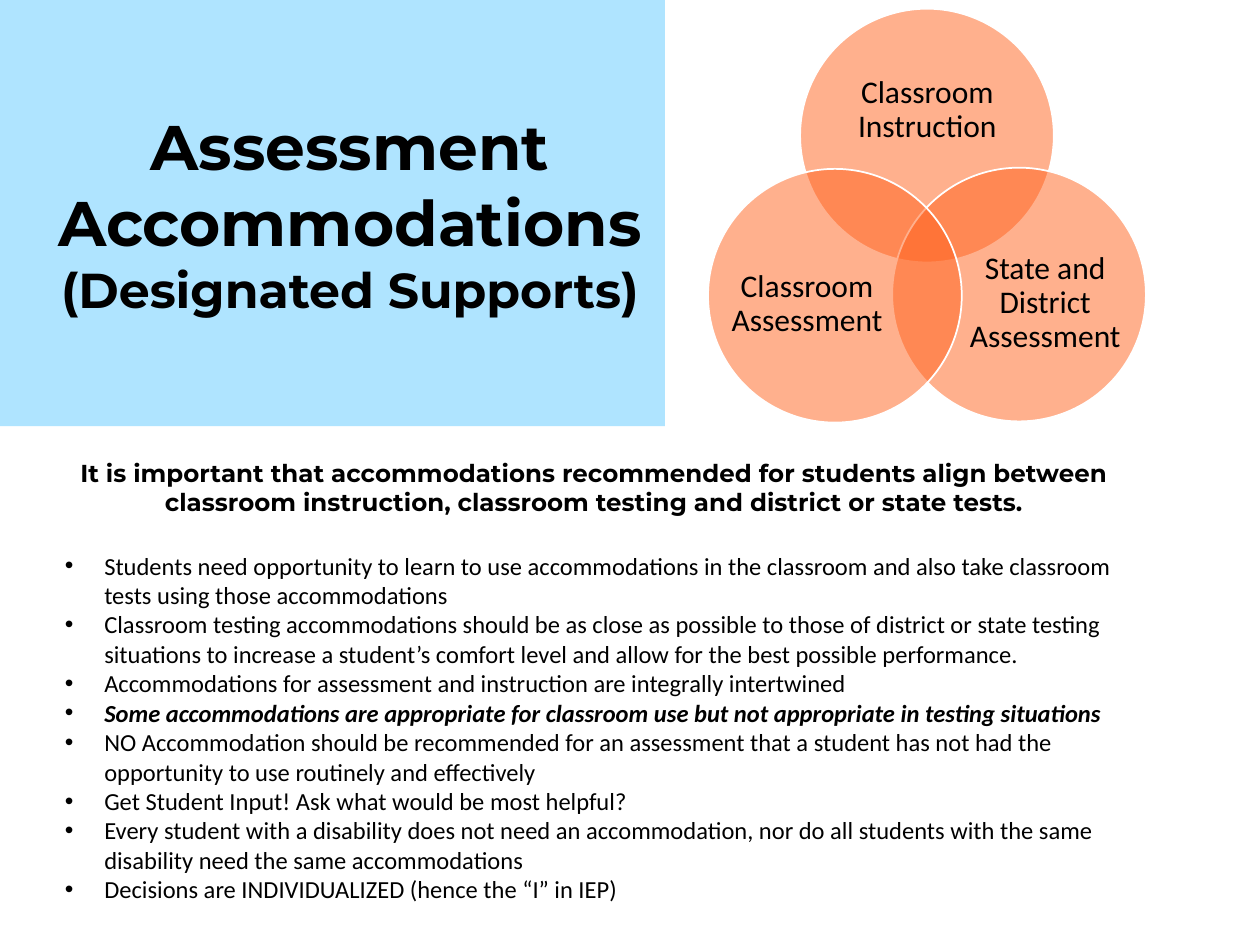
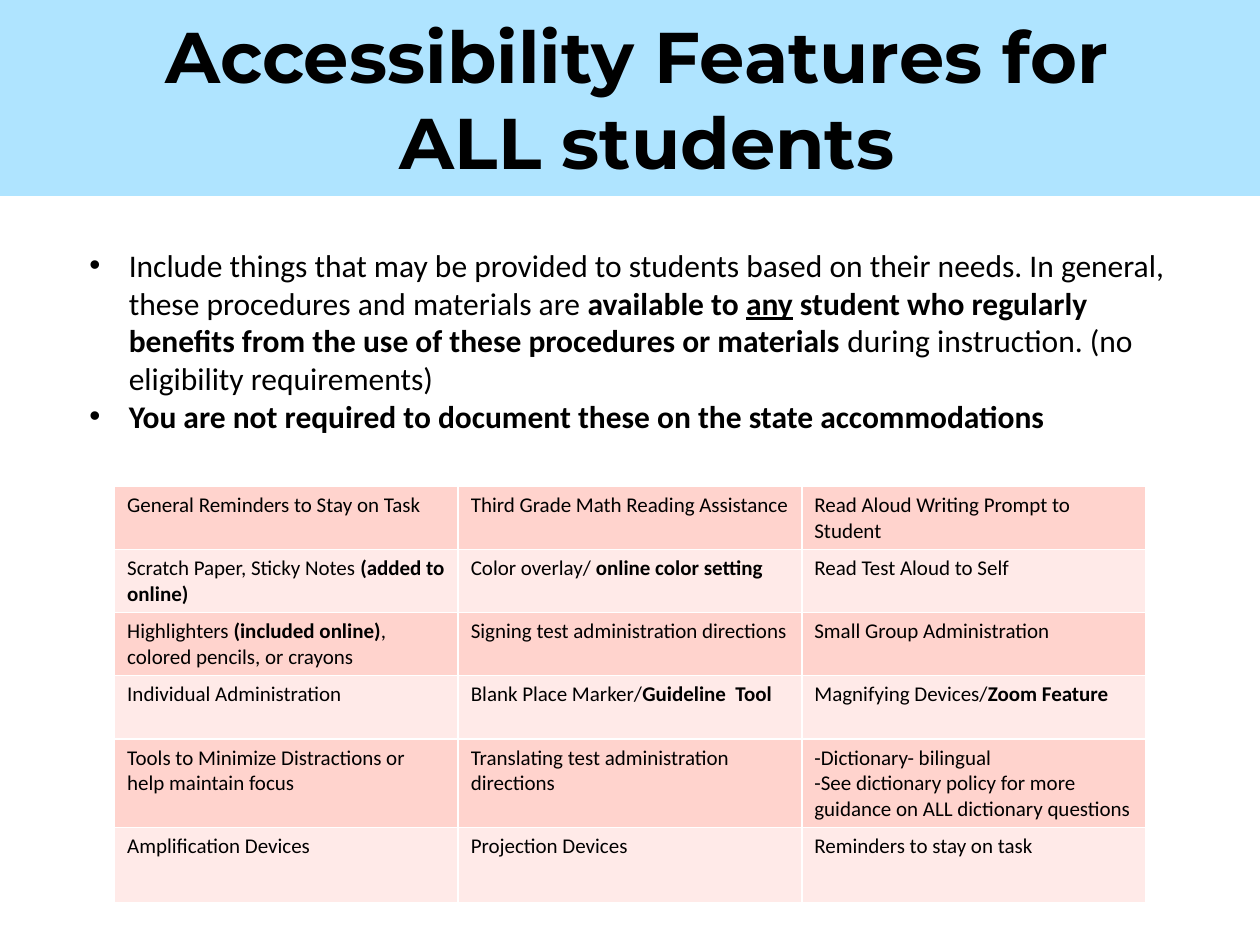
from dataclasses import dataclass
from typing import NamedTuple

from lxml import etree
from pptx import Presentation
from pptx.dml.color import RGBColor
from pptx.enum import shapes, text
from pptx.oxml import ns
from pptx.util import Pt

SKY = RGBColor(0xAF, 0xE4, 0xFF)
ORANGE = RGBColor(0xFF, 0x62, 0x1D)
ROSE = RGBColor(0xFF, 0xD3, 0xCD)
BLUSH = RGBColor(0xFF, 0xEA, 0xE8)
BLACK = RGBColor(0, 0, 0)
WHITE = RGBColor(0xFF, 0xFF, 0xFF)
HEAD = "Montserrat"
BODY = "Calibri"
INDENT = 22.5
DISC = 145


class Box(NamedTuple):
    left: float
    top: float
    width: float
    height: float

    def pts(self) -> list:
        return [Pt(side) for side in self]


class Bit(NamedTuple):
    words: str
    bold: bool = False
    slant: bool = False
    under: bool = False


@dataclass
class Circle:
    left: float
    top: float
    label: str
    area: Box


CIRCLES = [
    Circle(457.2, 5, "Classroom Instruction", Box(476.6, 30.2, 106.6, 65.5)),
    Circle(509.8, 95.8, "State and District Assessment", Box(553.7, 133.2, 87.1, 79.9)),
    Circle(404.6, 96.5, "Classroom Assessment", Box(417.6, 133.9, 87.1, 79.9)),
]

ADVICE = [
    "Students need opportunity to learn to use accommodations in the classroom and also "
    "take classroom tests using those accommodations",
    "Classroom testing accommodations should be as close as possible to those of district "
    "or state testing situations to increase a student’s comfort level and allow for the "
    "best possible performance.",
    "Accommodations for assessment and instruction are integrally intertwined",
    [Bit("Some accommodations are appropriate for classroom use but not appropriate in "
         "testing situations", bold=True, slant=True)],
    "NO Accommodation should be recommended for an assessment that a student has not had "
    "the opportunity to use routinely and effectively",
    "Get Student Input! Ask what would be most helpful?",
    "Every student with a disability does not need an accommodation, nor do all students "
    "with the same disability need the same accommodations",
    "Decisions are INDIVIDUALIZED (hence the “I” in IEP)",
]

POLICY = [
    [Bit("Include things that may be provided to students based on their needs. In general, "
         "these procedures and materials are "),
     Bit("available to ", bold=True),
     Bit("any", bold=True, under=True),
     Bit(" student who regularly benefits from the use of these procedures or materials ",
         bold=True),
     Bit("during instruction. (no eligibility requirements)")],
    [Bit("You are not required to document these on the state accommodations", bold=True)],
]

TOOLS = [
    [["General Reminders to Stay on Task"], ["Third Grade Math Reading Assistance"],
     ["Read Aloud Writing Prompt to Student"]],
    [[[Bit("Scratch Paper, Sticky Notes "), Bit("(added to online)", bold=True)]],
     [[Bit("Color overlay/ "), Bit("online color setting", bold=True)]],
     ["Read Test Aloud to Self"]],
    [[[Bit("Highlighters "), Bit("(included online)", bold=True),
       Bit(", colored pencils, or crayons")]],
     ["Signing test administration directions"], ["Small Group Administration"]],
    [["Individual Administration"],
     [[Bit("Blank Place Marker/"), Bit("Guideline  Tool", bold=True)]],
     [[Bit("Magnifying Devices/"), Bit("Zoom Feature", bold=True)]]],
    [["Tools to Minimize Distractions or help maintain focus"],
     ["Translating test administration directions"],
     ["-Dictionary- bilingual",
      "-See dictionary policy for more guidance on ALL dictionary questions"]],
    [["Amplification Devices"], ["Projection Devices"], ["Reminders to stay on task"]],
]
HEIGHTS = [34, 34, 34, 36.3, 47.5, 43]


def node(parent, tag: str, **attrs: str):
    return etree.SubElement(parent, ns.qn(tag), attrs)


def write(frame, content, *, size: float, font: str = BODY, bold: bool = False,
          center: bool = False, bullet: bool = False, ratio: float = 1,
          after: float = 0, more: bool = False) -> None:
    for spot, item in enumerate(content):
        para = frame.add_paragraph() if spot or more else frame.paragraphs[0]
        para.alignment = text.PP_ALIGN.CENTER if center else text.PP_ALIGN.LEFT
        para.line_spacing = ratio
        para.space_before = Pt(0)
        para.space_after = Pt(after)
        if bullet:
            props = para._p.get_or_add_pPr()
            props.set("marL", str(Pt(INDENT)))
            props.set("indent", str(-Pt(INDENT)))
            node(props, "a:buFont", typeface="Arial")
            node(props, "a:buChar", char="•")
        for bit in [Bit(item)] if isinstance(item, str) else item:
            run = para.add_run()
            run.text = bit.words
            face = run.font
            face.name = font
            face.size = Pt(size)
            face.color.rgb = BLACK
            face.bold = bold or bit.bold
            face.italic = bit.slant
            face.underline = bit.under


def frame_of(shape, *, pads=(7.2, 3.6, 7.2, 3.6), middle: bool = False):
    frame = shape.text_frame
    frame.word_wrap = True
    (frame.margin_left, frame.margin_top,
     frame.margin_right, frame.margin_bottom) = [Pt(pad) for pad in pads]
    anchor = text.MSO_ANCHOR
    frame.vertical_anchor = anchor.MIDDLE if middle else anchor.TOP
    return frame


def text_box(slide, box: Box, **layout):
    return frame_of(slide.shapes.add_textbox(*box.pts()), **layout)


def solid(slide, kind, box: Box, color: RGBColor):
    shape = slide.shapes.add_shape(kind, *box.pts())
    shape.shadow.inherit = False
    shape.fill.solid()
    shape.fill.fore_color.rgb = color
    shape.line.fill.background()
    return shape


def band(slide, width: float, height: float):
    shape = solid(slide, shapes.MSO_SHAPE.RECTANGLE, Box(0, 0, width, height), SKY)
    return frame_of(shape, pads=(27, 3.6, 7.2, 3.6), middle=True)


def draw_circle(slide, circle: Circle) -> None:
    box = Box(circle.left, circle.top, DISC, DISC)
    disc = solid(slide, shapes.MSO_SHAPE.OVAL, box, ORANGE)
    tint = disc._element.spPr.find(ns.qn("a:solidFill"))
    node(tint[0], "a:alpha", val="50000")
    disc.line.color.rgb = WHITE
    disc.line.width = Pt(1)
    frame = text_box(slide, circle.area, pads=(0, 0, 0, 0), middle=True)
    write(frame, [circle.label], size=18, center=True, ratio=0.9)


def edge(cell) -> None:
    props = cell._tc.get_or_add_tcPr()
    for side in ("a:lnL", "a:lnR", "a:lnT", "a:lnB"):
        fill = node(node(props, side, w=str(Pt(1))), "a:solidFill")
        node(fill, "a:srgbClr", val=str(WHITE))


def draw_table(slide, box: Box) -> None:
    table = slide.shapes.add_table(len(TOOLS), len(TOOLS[0]), *box.pts()).table
    table.first_row = table.horz_banding = False
    for col in table.columns:
        col.width = Pt(box.width / len(TOOLS[0]))
    for row, (height, line) in enumerate(zip(HEIGHTS, TOOLS)):
        table.rows[row].height = Pt(height)
        for col, content in enumerate(line):
            cell = table.cell(row, col)
            edge(cell)
            cell.fill.solid()
            cell.fill.fore_color.rgb = BLUSH if row % 2 else ROSE
            write(cell.text_frame, content, size=12)


def supports(slide) -> None:
    frame = text_box(slide, Box(30, 243.5, 619, 278.5), pads=(7.2, 18, 7.2, 3.6))
    write(frame, ["It is important that accommodations recommended for students align "
                  "between classroom instruction, classroom testing and district or state "
                  "tests."], size=14, font=HEAD, bold=True, center=True, after=19.5)
    write(frame, ADVICE, size=14, bullet=True, more=True)
    title = band(slide, 380, 243.5)
    write(title, ["Assessment", "Accommodations"], size=36, font=HEAD, bold=True, center=True)
    write(title, ["(Designated Supports)"], size=28, font=HEAD, bold=True, center=True,
          more=True)
    for circle in CIRCLES:
        draw_circle(slide, circle)


def features(slide) -> None:
    write(band(slide, 720, 112), ["Accessibility Features for ", "ALL students"],
          size=41, font=HEAD, bold=True, center=True)
    write(text_box(slide, Box(44, 137, 641.5, 116.5)), POLICY, size=18, bullet=True)
    draw_table(slide, Box(65.5, 278, 589, sum(HEIGHTS)))


def main() -> None:
    deck = Presentation()
    deck.slide_width, deck.slide_height = Pt(720), Pt(540)
    for build in (supports, features):
        build(deck.slides.add_slide(deck.slide_layouts[6]))
    deck.save("out.pptx")


if __name__ == "__main__":
    main()
